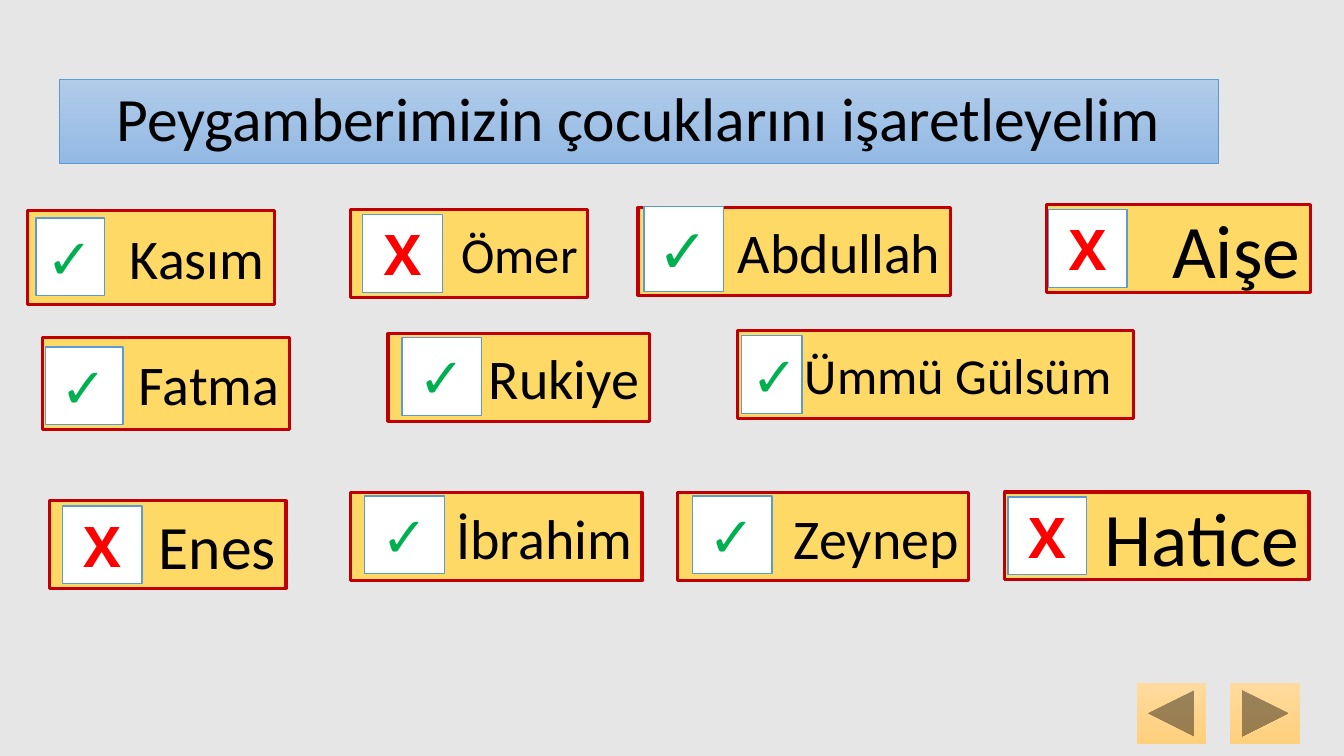
from pptx import Presentation
from pptx import util as u
from pptx.dml.color import RGBColor
from pptx.enum import shapes, text

GREY = RGBColor(0xE7, 0xE6, 0xE6)
GOLD = RGBColor(0xFF, 0xD9, 0x66)
DARK = RGBColor(0xC0, 0x00, 0x00)
BLUE = RGBColor(0x5B, 0x9B, 0xD5)
WHITE = RGBColor(0xFF, 0xFF, 0xFF)
BLACK = RGBColor(0x00, 0x00, 0x00)
GREEN = RGBColor(0x00, 0xB0, 0x50)
RED = RGBColor(0xFF, 0x00, 0x00)
SKY = RGBColor(0xB1, 0xCB, 0xE9), RGBColor(0x93, 0xB9, 0xE4)
PEACH = RGBColor(0xFF, 0xDB, 0x9E), RGBColor(0xFF, 0xD0, 0x7C)

TITLE = "Peygamberimizin çocuklarını işaretleyelim"
YES, NO = "✓", "X"
INKS = {YES: GREEN, NO: RED}
CARD_H, MARK_H = 2.21, 1.96

# name, size, card (left, top, width, height), mark, mark size, mark box
CARDS = [
    ("Kasım", 40, (0.69, 5.31, 6.22, 2.36), YES, 40, (0.91, 5.49, 1.73, MARK_H)),
    ("Ömer", 36, (8.84, 5.28, 5.97, CARD_H), NO, 40, (9.14, 5.41, 2.01, MARK_H)),
    ("Abdullah", 40, (16.08, 5.23, 7.87, CARD_H), YES, 44, (16.23, 5.21, 2.01, 2.13)),
    ("Aişe", 54, (26.37, 5.16, 6.65, CARD_H), NO, 40, (26.42, 5.28, 1.98, MARK_H)),
    ("Fatma", 40, (1.07, 8.51, 6.22, 2.31), YES, 40, (1.14, 8.74, 1.96, MARK_H)),
    ("Rukiye", 40, (9.78, 8.41, 6.58, CARD_H), YES, 40, (10.13, 8.51, 2.01, MARK_H)),
    ("Ümmü Gülsüm", 36, (18.59, 8.33, 9.98, CARD_H), YES, 40, (18.69, 8.46, 1.52, MARK_H)),
    ("Enes", 44, (1.24, 12.62, 5.97, CARD_H), NO, 40, (1.57, 12.75, 2.01, MARK_H)),
    ("İbrahim", 40, (8.84, 12.42, 7.34, CARD_H), YES, 40, (9.19, 12.5, 2.01, MARK_H)),
    ("Zeynep", 40, (17.07, 12.42, 7.34, CARD_H), YES, 40, (17.45, 12.5, 2.01, MARK_H)),
    ("Hatice", 54, (25.32, 12.4, 7.67, CARD_H), NO, 40, (25.4, 12.52, 1.98, MARK_H)),
]
INSETS = {"Ümmü Gülsüm": 0.55}
BUTTONS = [
    (shapes.MSO_SHAPE.ACTION_BUTTON_BACK_OR_PREVIOUS, 28.65),
    (shapes.MSO_SHAPE.ACTION_BUTTON_FORWARD_OR_NEXT, 31.01),
]


def shade(shape, colors):
    """Fill from top to bottom with two colours."""
    shape.fill.gradient()
    shape.fill.gradient_angle = 270
    for stop, color in zip(shape.fill.gradient_stops, colors):
        stop.color.rgb = color


def write(shape, words, size, face, ink, align, bold=False):
    frame = shape.text_frame
    frame.text = words
    frame.word_wrap = True
    frame.auto_size = text.MSO_AUTO_SIZE.NONE
    frame.vertical_anchor = text.MSO_ANCHOR.MIDDLE
    para = frame.paragraphs[0]
    para.alignment = align
    font = para.font
    font.size, font.name, font.bold = u.Pt(size), face, bold
    font.color.rgb = ink


def add(slide, kind, box):
    shape = slide.shapes.add_shape(kind, *map(u.Cm, box))
    shape.shadow.inherit = False
    return shape


def panel(slide, box, fill, line, width):
    shape = add(slide, shapes.MSO_SHAPE.RECTANGLE, box)
    shape.fill.solid()
    shape.fill.fore_color.rgb = fill
    shape.line.color.rgb = line
    shape.line.width = u.Pt(width)
    return shape


def main():
    deck = Presentation()
    deck.slide_width, deck.slide_height = u.Cm(33.87), u.Cm(19.05)
    slide = deck.slides.add_slide(deck.slide_layouts[5])
    slide.background.fill.solid()
    slide.background.fill.fore_color.rgb = GREY

    title = slide.shapes.title
    title.left, title.top, title.width, title.height = map(u.Cm, (1.5, 2.01, 29.21, 2.11))
    shade(title, SKY)
    title.line.color.rgb = BLUE
    title.line.width = u.Pt(0.5)
    write(title, TITLE, 44, "Calibri", BLACK, text.PP_ALIGN.CENTER)
    title.text_frame.paragraphs[0].line_spacing = 0.9

    for name, size, box, mark, points, spot in CARDS:
        card = panel(slide, box, GOLD, DARK, 2.25)
        write(card, name, size, "Calibri", BLACK, text.PP_ALIGN.RIGHT)
        card.text_frame.margin_right = u.Cm(INSETS.get(name, 0.25))
        check = panel(slide, spot, WHITE, BLUE, 1)
        write(check, mark, points, "Open Sans", INKS[mark], text.PP_ALIGN.CENTER, True)

    for kind, left in BUTTONS:
        button = add(slide, kind, (left, 17.2, 1.75, 1.55))
        shade(button, PEACH)
        button.line.fill.background()

    deck.save("out.pptx")


if __name__ == "__main__":
    main()
